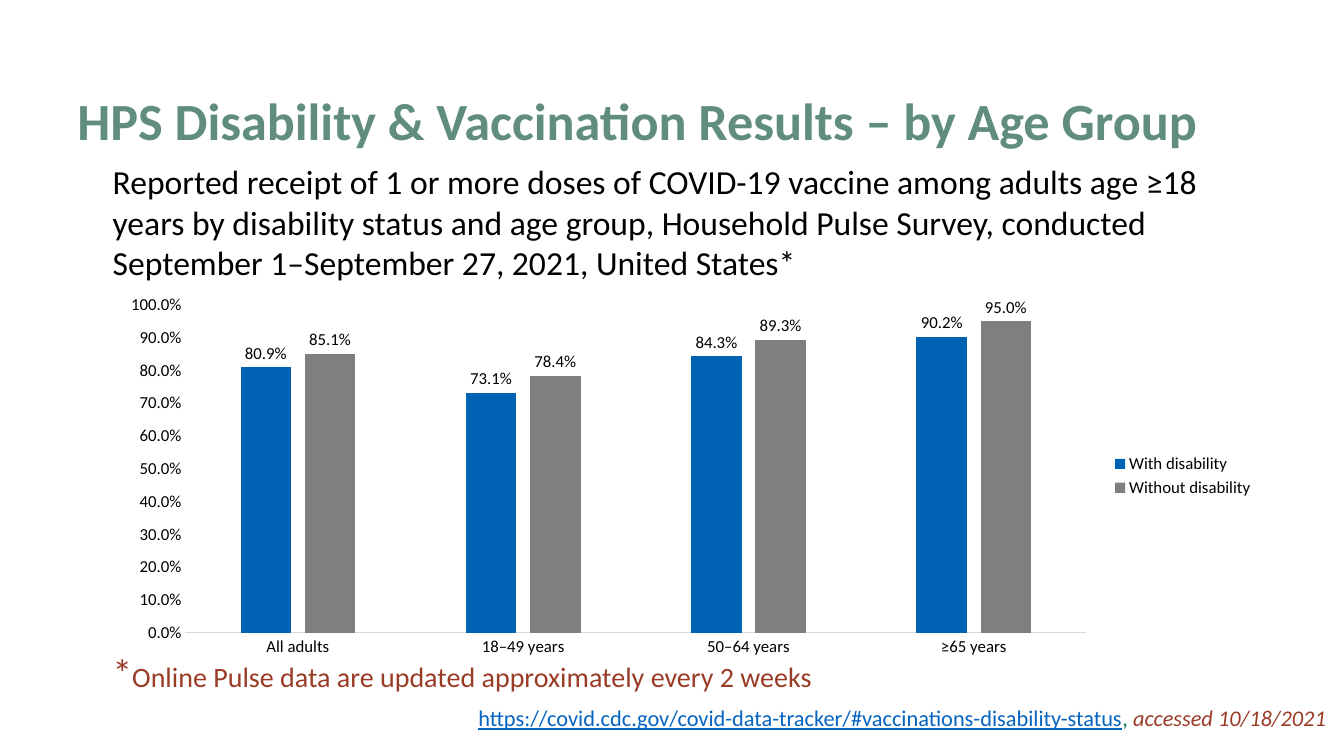
from pptx import Presentation
from pptx.chart.data import CategoryChartData
from pptx.dml.color import RGBColor
from pptx.enum.chart import XL_CHART_TYPE, XL_LABEL_POSITION, XL_LEGEND_POSITION, XL_TICK_MARK
from pptx.enum.text import MSO_ANCHOR, PP_ALIGN
from pptx.util import Inches, Pt

CLUSTERED = XL_CHART_TYPE.COLUMN_CLUSTERED
OUTSIDE_END = XL_LABEL_POSITION.OUTSIDE_END
LEGEND_RIGHT = XL_LEGEND_POSITION.RIGHT
NO_TICK = XL_TICK_MARK.NONE
TOP, BOTTOM = MSO_ANCHOR.TOP, MSO_ANCHOR.BOTTOM
LEFT, RIGHT = PP_ALIGN.LEFT, PP_ALIGN.RIGHT

COLORS = {
    "title": "618E7C",
    "text": "000000",
    "note": "9A3B26",
    "link": "0563C1",
    "separator": "007D57",
    "axis": "D9D9D9",
    "with": "0062B3",
    "without": "7F7F7F",
}
PERCENT = "0.0%"
CATEGORIES = ["All adults", "18–49 years", "50–64 years", "≥65 years"]
SERIES = [
    ("With disability", "with", [0.809, 0.731, 0.843, 0.902]),
    ("Without disability", "without", [0.851, 0.784, 0.893, 0.95]),
]


def set_attributes(target, values):
    for name, value in values.items():
        setattr(target, name, value)


class SlideBuilder:
    font_name = "Calibri"

    def __init__(self, slide):
        self.slide = slide

    def color(self, name):
        return RGBColor.from_string(COLORS[name])

    def style_font(self, font, size, color, **formats):
        set_attributes(font, {"name": self.font_name, "size": Pt(size), **formats})
        font.color.rgb = self.color(color)

    def fill(self, target, color):
        target.format.fill.solid()
        target.format.fill.fore_color.rgb = self.color(color)

    def text(self, box, runs, anchor=TOP, align=LEFT, line_spacing=None):
        shape = self.slide.shapes.add_textbox(*map(Inches, box))
        frame = shape.text_frame
        set_attributes(frame, {"word_wrap": True, "vertical_anchor": anchor})
        paragraph = frame.paragraphs[0]
        set_attributes(paragraph, {"alignment": align, "line_spacing": line_spacing})
        for content, size, color, formats in runs:
            run = paragraph.add_run()
            run.text = content
            self.style_font(run.font, size, color, **formats)

    def column_chart(self, box, categories, series_rows):
        data = CategoryChartData(number_format=PERCENT)
        data.categories = categories
        for name, _, values in series_rows:
            data.add_series(name, values)
        chart = self.slide.shapes.add_chart(CLUSTERED, *map(Inches, box), data).chart
        set_attributes(chart, {"has_title": False, "has_legend": True})
        self.style_font(chart.font, 12, "text")
        set_attributes(chart.legend, {"position": LEGEND_RIGHT, "include_in_layout": False})
        self.style_font(chart.legend.font, 12, "text")

        for axis in (chart.category_axis, chart.value_axis):
            set_attributes(axis, {
                "major_tick_mark": NO_TICK,
                "minor_tick_mark": NO_TICK,
                "has_major_gridlines": False,
            })
            self.style_font(axis.tick_labels.font, 12, "text")
        category_line = chart.category_axis.format.line
        category_line.width = Pt(0.75)
        category_line.color.rgb = self.color("axis")
        value_axis = chart.value_axis
        set_attributes(value_axis, {"minimum_scale": 0, "maximum_scale": 1, "major_unit": 0.1})
        value_axis.format.line.fill.background()
        number_format = {"number_format": PERCENT, "number_format_is_linked": False}
        set_attributes(value_axis.tick_labels, number_format)

        plot = chart.plots[0]
        set_attributes(plot, {"gap_width": 219, "overlap": -27, "vary_by_categories": False})
        for series, (_, color, _) in zip(plot.series, series_rows):
            self.fill(series, color)
            labels = series.data_labels
            set_attributes(labels, {"show_value": True, "position": OUTSIDE_END, **number_format})
            self.style_font(labels.font, 12, "text")


def main():
    presentation = Presentation()
    set_attributes(presentation, {"slide_width": Inches(13.33), "slide_height": Inches(7.5)})
    builder = SlideBuilder(presentation.slides.add_slide(presentation.slide_layouts[6]))

    builder.text(
        (0.67, 0.3, 12, 1.25),
        [("HPS Disability & Vaccination Results – by Age Group", 37.3, "title", {"bold": True})],
        anchor=BOTTOM,
        line_spacing=Pt(40),
    )
    builder.text(
        (1.02, 1.55, 11.57, 1.31),
        [(
            "Reported receipt of 1 or more doses of COVID-19 vaccine among adults age ≥18 "
            "years by disability status and age group, Household Pulse Survey, conducted "
            "September 1–September 27, 2021, United States*",
            24, "text", {},
        )],
    )
    builder.column_chart((1.07, 2.85, 11.47, 3.74), CATEGORIES, SERIES)
    builder.text(
        (1.02, 6.38, 11.2, 0.57),
        [
            ("*", 28, "note", {}),
            ("Online Pulse data are updated approximately every 2 weeks", 20, "note", {}),
        ],
    )
    builder.text(
        (0, 6.94, 13.25, 0.37),
        [
            (
                "https://covid.cdc.gov/covid-data-tracker/#vaccinations-disability-status",
                16, "link", {"underline": True},
            ),
            (", ", 16, "separator", {}),
            ("accessed 10/18/2021", 16, "note", {"italic": True}),
        ],
        align=RIGHT,
    )
    presentation.save("out.pptx")


if __name__ == "__main__":
    main()
